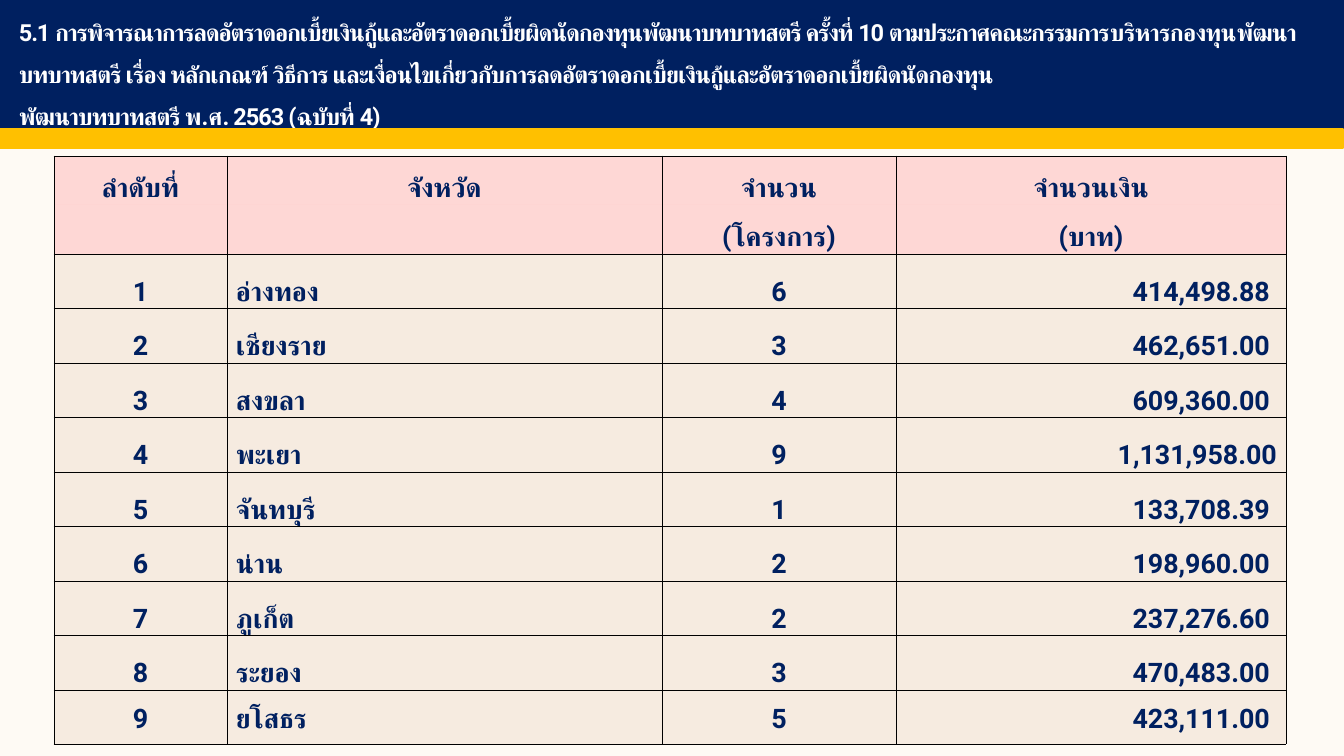
import pptx
import pptx.dml.color
import pptx.enum.shapes
import pptx.enum.text
import pptx.oxml
import pptx.oxml.ns
import pptx.util

PX = 7560  # EMU in one px
THEME = {
    "font": "Roboto", "title_size": 14, "table_size": 16,
    "navy": "002060", "gold": "FFC000", "white": "FFFFFF", "grid": "000000",
    "back": "FEFAF4", "head": "FFC9C9", "body": "F4E8DC",
}
ALIGN = pptx.enum.text.PP_ALIGN
MIDDLE = pptx.enum.text.MSO_ANCHOR.MIDDLE
qn = pptx.oxml.ns.qn


def add_run(p, text, size, color, spacing=0):
    r = p.add_run()
    r.text = text
    r.font.size = pptx.util.Pt(THEME[size])
    r.font.bold = True
    r.font.name = THEME["font"]
    r.font.color.rgb = pptx.dml.color.RGBColor.from_string(THEME[color])
    rPr = r.font._element
    cs = pptx.oxml.parse_xml(f'<a:cs {pptx.oxml.ns.nsdecls("a")} typeface="{THEME["font"]}"/>')
    rPr.find(qn("a:latin")).addnext(cs)
    if spacing:
        rPr.set("spc", str(spacing))


def style_cell(cell, color, opacity, hidden_side=None):
    cell.fill.solid()
    cell.fill.fore_color.rgb = pptx.dml.color.RGBColor.from_string(THEME[color])
    tcPr = cell._tc.get_or_add_tcPr()
    ns = pptx.oxml.ns.nsdecls("a")
    rgb = tcPr.find(qn("a:solidFill")).find(qn("a:srgbClr"))
    rgb.append(pptx.oxml.parse_xml(f'<a:alpha {ns} val="{opacity * 1000}"/>'))
    for i, side in enumerate("LRTB"):
        paint = f'<a:solidFill><a:srgbClr val="{THEME["grid"]}"/></a:solidFill>'
        if side == hidden_side:
            paint = "<a:noFill/>"
        tcPr.insert(i, pptx.oxml.parse_xml(f'<a:ln{side} {ns} w="6350">{paint}</a:ln{side}>'))


prs = pptx.Presentation()
prs.slide_width, prs.slide_height = 1344 * PX, 756 * PX
s = prs.slides.add_slide(prs.slide_layouts[5])
s.background.fill.solid()
s.background.fill.fore_color.rgb = pptx.dml.color.RGBColor.from_string(THEME["back"])

# Table of provinces
heads = [["ลำดับที่", "จังหวัด", "จำนวน", "จำนวนเงิน"], ["", "", "(โครงการ)", "(บาท)"]]
provinces = [
    ("อ่างทอง", 6, "414,498.88"),
    ("เชียงราย", 3, "462,651.00"),
    ("สงขลา", 4, "609,360.00"),
    ("พะเยา", 9, "1,131,958.00"),
    ("จันทบุรี", 1, "133,708.39"),
    ("น่าน", 2, "198,960.00"),
    ("ภูเก็ต", 2, "237,276.60"),
    ("ระยอง", 3, "470,483.00"),
    ("ยโสธร", 5, "423,111.00"),
]
rows = heads + [[str(n), name, str(count), money]
                for n, (name, count, money) in enumerate(provinces, 1)]
widths = [173, 435, 234, 390]
body_edges = [round(490 * i / len(provinces)) for i in range(len(provinces) + 1)]
heights = [49, 49] + [b - a for a, b in zip(body_edges, body_edges[1:])]
aligns = [ALIGN.CENTER, ALIGN.LEFT, ALIGN.CENTER, ALIGN.RIGHT]

frame = s.shapes.add_table(len(rows), len(widths), 54 * PX, 156 * PX,
                           sum(widths) * PX, sum(heights) * PX)
table = frame.table
table.first_row = table.horz_banding = False
for column, width in zip(table.columns, widths):
    column.width = width * PX
for i, (row, height) in enumerate(zip(rows, heights)):
    table.rows[i].height = height * PX
    is_head = i < len(heads)
    for j, text in enumerate(row):
        cell = table.cell(i, j)
        cell.vertical_anchor = MIDDLE
        side_margin = 1 if is_head else 9
        cell.margin_left = cell.margin_right = side_margin * PX
        cell.margin_top = cell.margin_bottom = 0
        p = cell.text_frame.paragraphs[0]
        if is_head:
            style_cell(cell, "head", 70, "BT"[i])
            p.alignment = ALIGN.CENTER
            p.line_spacing = 1.5
        else:
            style_cell(cell, "body", 80)
            p.alignment = aligns[j]
            p.line_spacing = 1.15 if i == len(rows) - 1 else 1.7
            p.space_after = pptx.util.Pt(10)
            # Amounts below a million sit slightly further in
            if j == 3 and len(text) == 10:
                cell.margin_right = 16 * PX
        if text:
            add_run(p, text, "table_size", "navy")

# Header band and gold rule, with the title between them
bands = []
for x, y, w, h, color in [(1, 0, 1344, 129, "navy"), (-1, 129, 1344, 19, "gold")]:
    sp = s.shapes.add_shape(pptx.enum.shapes.MSO_SHAPE.RECTANGLE, x * PX, y * PX, w * PX, h * PX)
    sp.shadow.inherit = False
    sp.fill.solid()
    sp.fill.fore_color.rgb = pptx.dml.color.RGBColor.from_string(THEME[color])
    sp.line.color.rgb = pptx.dml.color.RGBColor.from_string(THEME[color])
    sp.line.width = pptx.util.Pt(1)
    bands.append(sp)

title = s.shapes.title
bands[0]._element.addnext(title._element)
title.left, title.top, title.width, title.height = 1 * PX, 7 * PX, 1339 * PX, 120 * PX
tf = title.text_frame
tf.word_wrap = True
tf.auto_size = pptx.enum.text.MSO_AUTO_SIZE.NONE
tf.vertical_anchor = MIDDLE
tf.margin_left = tf.margin_right = 18 * PX
tf.margin_top = tf.margin_bottom = 12 * PX
p = tf.paragraphs[0]
p.alignment = ALIGN.LEFT
p.line_spacing = 1.5
title_runs = [
    ("5.1 การพิจารณาการลดอัตราดอกเบี้ยเงินกู้และอัตราดอกเบี้ยผิดนัดกองทุนพัฒนาบทบาทสตรี ครั้งที่ 10 ตามประกาศคณะกรรมการ", -70),
    ("บริหารกองทุน", -40),
    ("พัฒนาบทบาทสตรี เรื่อง หลักเกณฑ์ วิธีการ และเงื่อนไขเกี่ยวกับการลดอัตราดอกเบี้ยเงินกู้และอัตราดอกเบี้ยผิดนัดกองทุน", -60),
]
for text, spacing in title_runs:
    add_run(p, text, "title_size", "white", spacing)
p.add_line_break()
add_run(p, "พัฒนาบทบาทสตรี พ.ศ. 2563 (ฉบับที่ 4)", "title_size", "white", -60)

prs.save("out.pptx")
